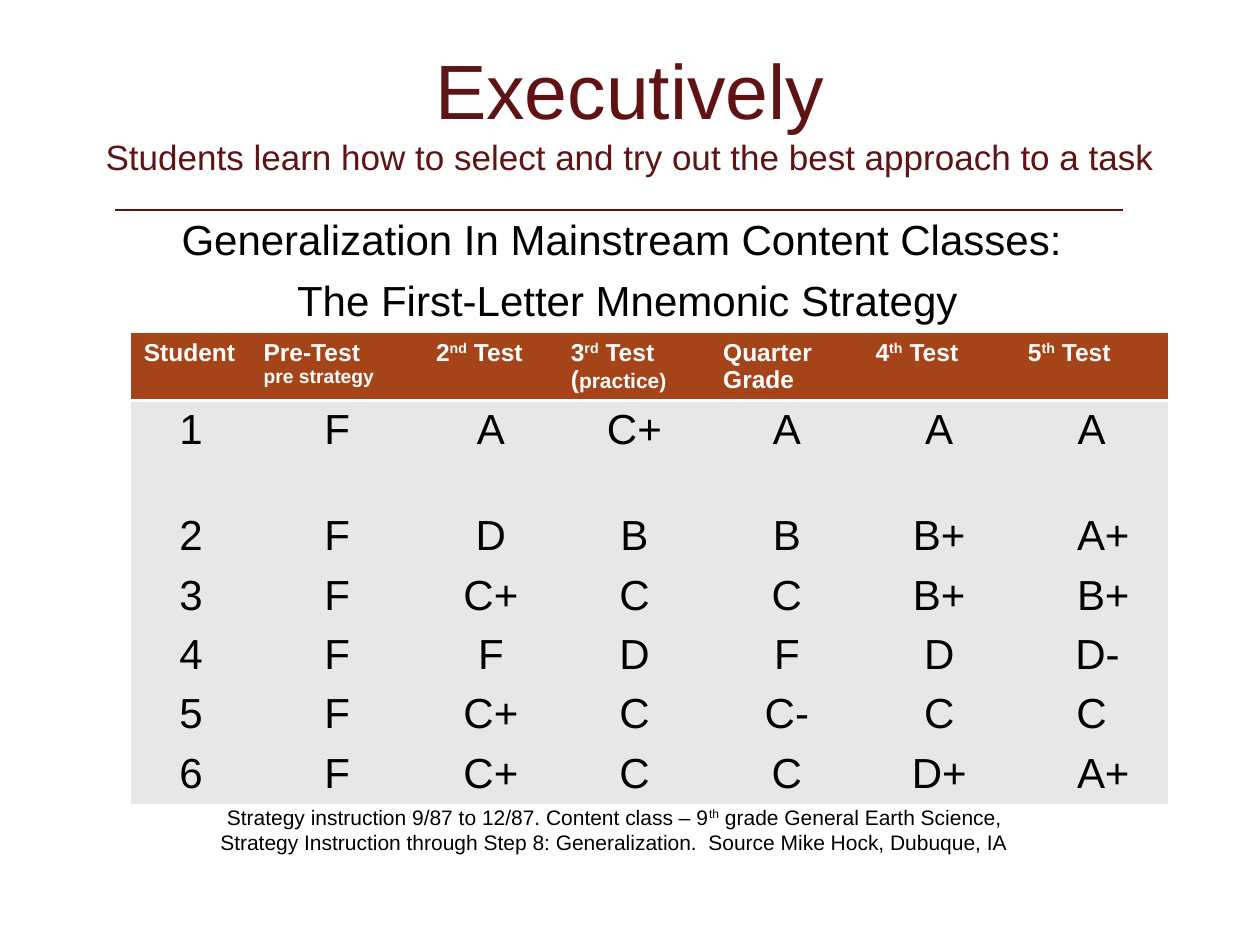
from lxml.etree import SubElement
from pptx import Presentation
from pptx.dml.color import RGBColor
from pptx.enum.text import MSO_ANCHOR, MSO_AUTO_SIZE, PP_ALIGN
from pptx.oxml.ns import qn
from pptx.util import Pt

PLAIN_TABLE_STYLE = "{2D5ABB26-0587-4C30-8999-92F81FD0307C}"
SUPER = "super"
SPACE_WIDTH = 6.67

HEADERS = [
    [("Student", None)],
    [("Pre-Test\n", None), ("pre strategy", 11)],
    [("2", None), ("nd", SUPER), (" Test", None)],
    [("3", None), ("rd", SUPER), (" Test\n(", None), ("practice)", 12)],
    [("Quarter Grade", None)],
    [("4", None), ("th", SUPER), (" Test", None)],
    [("5", None), ("th", SUPER), (" Test", None)],
]
GRADES = [
    "F A C+ A A A",
    "F D B B B+ A+",
    "F C+ C C B+ B+",
    "F F D F D D-",
    "F C+ C C- C C",
    "F C+ C C D+ A+",
]
# Signed grades in the last column sit to the right of the others.
LAST_COLUMN_INDENT = {"+": 2 * SPACE_WIDTH, "-": SPACE_WIDTH}
COLUMN_WIDTHS = [68.4, 98.6, 77] + [87.1] * 4
ROW_HEIGHTS = [38.5, 60.6] + [34] * 5


def color(value):
    return RGBColor.from_string(value)


class SlideBuilder:
    font = "Arial"
    accent = "601314"
    header_fill = "A54419"
    cell_fill = "E7E7E7"
    white = "FFFFFF"
    black = "000000"

    def __init__(self, slide):
        self.slide = slide

    def set_text(self, paragraph, segments, size, text_color, align=PP_ALIGN.CENTER, bold=False):
        """Fill a paragraph; a segment's mark is a size, SUPER or None."""
        paragraph.alignment = align
        font = paragraph.font
        font.name, font.size, font.bold = self.font, Pt(size), bold
        font.color.rgb = color(text_color)
        for text, mark in segments:
            for index, line in enumerate(text.split("\n")):
                if index:
                    paragraph.add_line_break()
                if not line:
                    continue
                run = paragraph.add_run()
                run.text = line
                if mark == SUPER:
                    run.font._element.set("baseline", "30000")
                elif mark:
                    run.font.size = Pt(mark)

    def place(self, shape, left, top, width, height):
        shape.left, shape.top = Pt(left), Pt(top)
        shape.width, shape.height = Pt(width), Pt(height)
        shape.text_frame.word_wrap = True
        shape.text_frame.auto_size = MSO_AUTO_SIZE.NONE
        return shape.text_frame

    def title(self, heading, subtitle, *box):
        frame = self.place(self.slide.shapes.title, *box)
        frame.vertical_anchor = MSO_ANCHOR.MIDDLE
        frame.margin_bottom = Pt(27)
        self.set_text(frame.paragraphs[0], [(heading + "\n", None), (subtitle, 20)],
                      44, self.accent)

    def body(self, lines, *box):
        frame = self.place(self.slide.placeholders[1], *box)
        frame.vertical_anchor = MSO_ANCHOR.TOP
        frame.margin_top = Pt(7)
        for index, line in enumerate(lines):
            paragraph = frame.add_paragraph() if index else frame.paragraphs[0]
            paragraph.space_before = Pt(6 if index else 0)
            properties = paragraph._p.get_or_add_pPr()
            properties.set("marL", "0")
            properties.set("indent", "0")
            SubElement(properties, qn("a:buNone"))
            self.set_text(paragraph, [(line, None)], 24, self.black)

    def rule(self, left, y, right):
        line = self.slide.shapes.add_connector(1, Pt(left), Pt(y), Pt(right), Pt(y))
        line.line.color.rgb = color(self.accent)
        line.line.width = Pt(1.5)
        SubElement(line._element.spPr, qn("a:effectLst"))

    def caption(self, segments, *box):
        area = self.slide.shapes.add_textbox(0, 0, 0, 0)
        frame = self.place(area, *box)
        self.set_text(frame.paragraphs[0], segments, 12, self.black)

    def bottom_border(self, cell, width):
        border = SubElement(cell._tc.get_or_add_tcPr(), qn("a:lnB"), w=str(Pt(width)))
        fill = SubElement(border, qn("a:solidFill"))
        SubElement(fill, qn("a:srgbClr"), val=self.white)

    def fill(self, cell, fill_color):
        cell.fill.solid()
        cell.fill.fore_color.rgb = color(fill_color)

    def grade_table(self, left, top):
        table = self.slide.shapes.add_table(
            len(ROW_HEIGHTS), len(COLUMN_WIDTHS), Pt(left), Pt(top),
            Pt(sum(COLUMN_WIDTHS)), Pt(sum(ROW_HEIGHTS))).table
        table.horz_banding = False
        table._tbl.tblPr.find(qn("a:tableStyleId")).text = PLAIN_TABLE_STYLE
        for column, width in zip(table.columns, COLUMN_WIDTHS):
            column.width = Pt(width)
        for row, height in zip(table.rows, ROW_HEIGHTS):
            row.height = Pt(height)
        for cell, segments in zip(table.rows[0].cells, HEADERS):
            self.bottom_border(cell, 2)
            self.fill(cell, self.header_fill)
            self.set_text(cell.text_frame.paragraphs[0], segments, 14, self.white,
                          PP_ALIGN.LEFT, bold=True)
        last = len(COLUMN_WIDTHS) - 1
        for student, grades in enumerate(GRADES, start=1):
            for column, value in enumerate([str(student), *grades.split()]):
                cell = table.cell(student, column)
                self.fill(cell, self.cell_fill)
                if column == last:
                    cell.margin_left = Pt(7.2 + LAST_COLUMN_INDENT.get(value[-1], 0))
                self.set_text(cell.text_frame.paragraphs[0], [(value, None)], 24, self.black)


def main():
    presentation = Presentation()
    presentation.slide_width, presentation.slide_height = Pt(720), Pt(540)
    builder = SlideBuilder(presentation.slides.add_slide(presentation.slide_layouts[1]))
    builder.rule(66, 120, 642)
    builder.title("Executively",
                  "Students learn how to select and try out the best approach to a task",
                  15, 29.5, 690, 90)
    builder.body(["Generalization In Mainstream Content Classes: ",
                  "The First-Letter Mnemonic Strategy"], 52.5, 115.2, 612, 312)
    builder.grade_table(75, 190)
    builder.caption([("Strategy instruction 9/87 to 12/87. Content class – 9", None),
                     ("th", SUPER),
                     (" grade General Earth Science, Strategy Instruction through Step 8: "
                      "Generalization.  Source Mike Hock, Dubuque, IA", None)],
                    111, 456, 480, 36)
    presentation.save("out.pptx")


if __name__ == "__main__":
    main()
